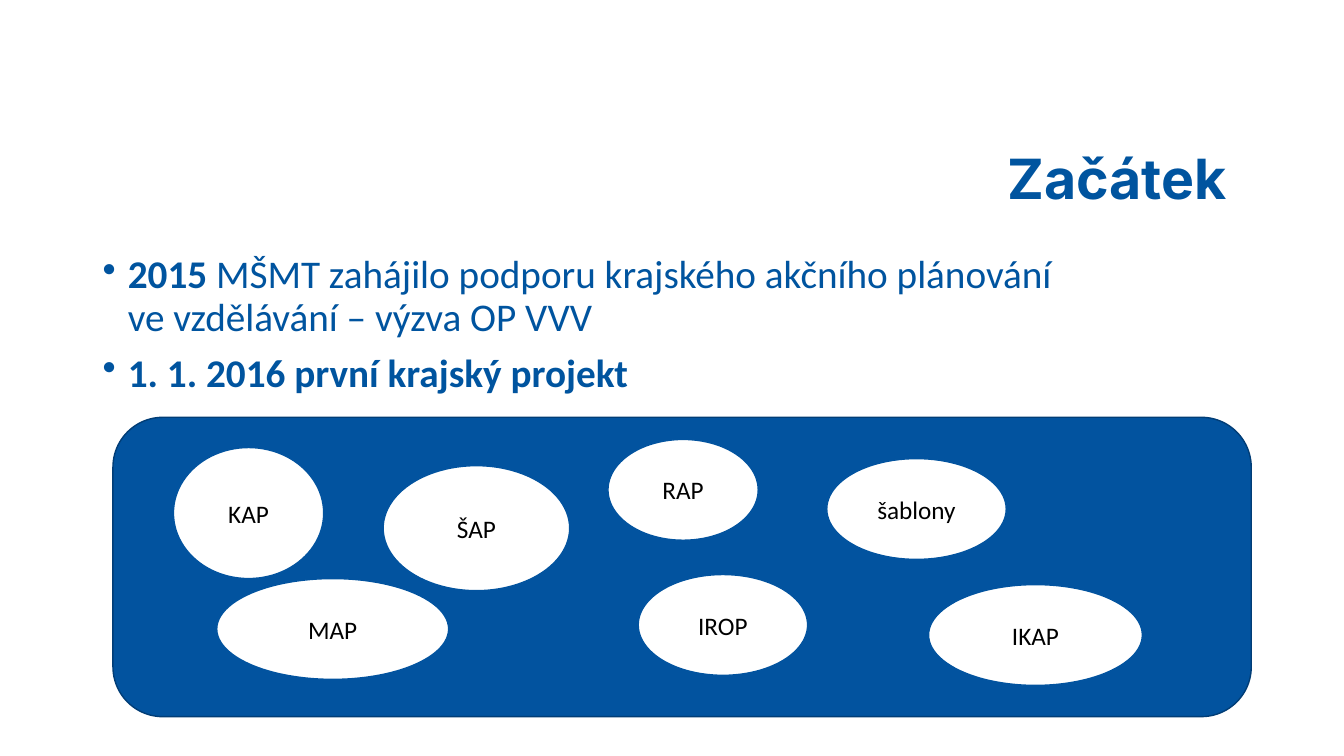
"""Builds the slide on the beginnings of regional action planning in education."""
from lxml.etree import SubElement
from pptx import Presentation
from pptx.dml.color import RGBColor
from pptx.enum.shapes import MSO_SHAPE as Shape
from pptx.enum.text import MSO_ANCHOR as Anchor, PP_ALIGN as Align
from pptx.oxml.ns import qn
from pptx.util import Pt

PX = 9144
BLUE, PANEL_BLUE, PANEL_EDGE = "00549F", "02539F", "013D76"
WHITE, BLACK = "FFFFFF", "000000"


def color(value):
    return RGBColor.from_string(value)


def add_run(paragraph, text, ink, **formats):
    run = paragraph.add_run()
    run.text = text
    run.font.color.rgb = color(ink)
    for name, value in formats.items():
        setattr(run.font, name, value)


deck = Presentation()
deck.slide_width, deck.slide_height = 1333 * PX, 750 * PX
slide = deck.slides.add_slide(deck.slide_layouts[6])

heading = slide.shapes.add_textbox(92 * PX, 143 * PX, 1150 * PX, 75 * PX).text_frame
for name, value in {"word_wrap": True, "vertical_anchor": Anchor.MIDDLE,
                    "margin_right": 25 * PX}.items():
    setattr(heading, name, value)
title = heading.paragraphs[0]
title.alignment, title.line_spacing = Align.RIGHT, 0.9
add_run(title, "Začátek", BLUE, name="Inter", size=Pt(39.6), bold=True)

milestones = [
    [[("2015", True), (" MŠMT zahájilo podporu krajského akčního plánování", False)],
     [("ve vzdělávání – výzva OP VVV", False)]],
    [[("1. 1. 2016 první krajský projekt", True)]],
]
body = slide.shapes.add_textbox(92 * PX, 248 * PX, 1150 * PX, 422 * PX).text_frame
body.word_wrap = True
for order, lines in enumerate(milestones):
    milestone = body.add_paragraph() if order else body.paragraphs[0]
    properties = milestone._p.get_or_add_pPr()
    properties.set("marL", str(25 * PX))
    properties.set("indent", str(-25 * PX))
    SubElement(properties, qn("a:buChar")).set("char", "•")
    milestone.line_spacing = 0.9
    milestone.space_before = Pt(10 if order else 0)
    for row, pieces in enumerate(lines):
        if row:
            milestone.add_line_break()
        for text, bold in pieces:
            add_run(milestone, text, BLUE, name="Calibri", size=Pt(28), bold=bold)

bubbles = [
    ("KAP", 172, 444, 149, 130),
    ("MAP", 215, 574, 230, 100),
    ("ŠAP", 380, 462, 185, 124),
    ("RAP", 603, 436, 149, 100),
    ("IROP", 633, 570, 168, 100),
    ("šablony", 820, 455, 178, 100),
    ("IKAP", 921, 580, 212, 100),
]
figures = [("", Shape.ROUNDED_RECTANGLE, (112, 414, 1129, 297), PANEL_BLUE, PANEL_EDGE)]
figures += [(label, Shape.OVAL, box, WHITE, PANEL_BLUE) for label, *box in bubbles]
for label, outline, box, fill, edge in figures:
    figure = slide.shapes.add_shape(outline, *(length * PX for length in box))
    figure.shadow.inherit = False
    figure.fill.solid()
    figure.fill.fore_color.rgb = color(fill)
    figure.line.color.rgb = color(edge)
    figure.line.width = Pt(1)
    if label:
        figure.text_frame.vertical_anchor = Anchor.MIDDLE
        caption = figure.text_frame.paragraphs[0]
        caption.alignment = Align.CENTER
        add_run(caption, label, BLACK, name="Calibri", size=Pt(18))

deck.save("out.pptx")
